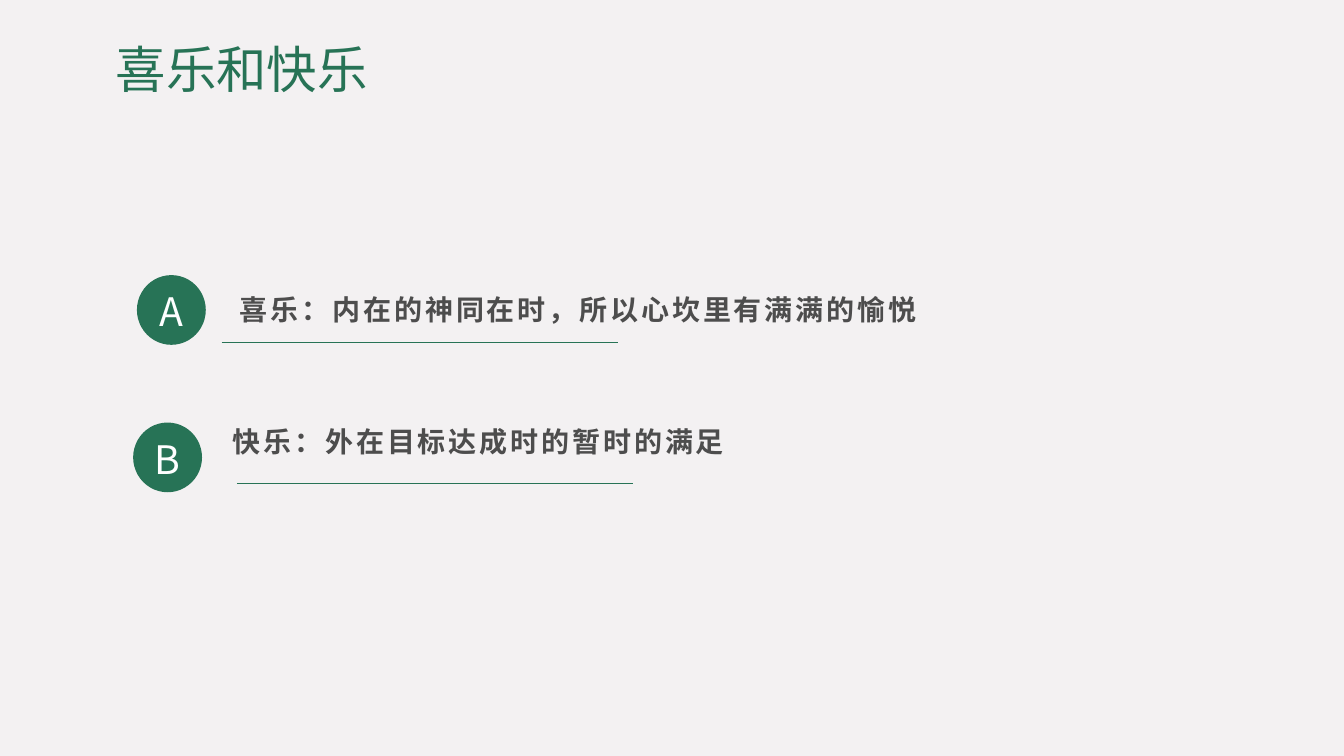
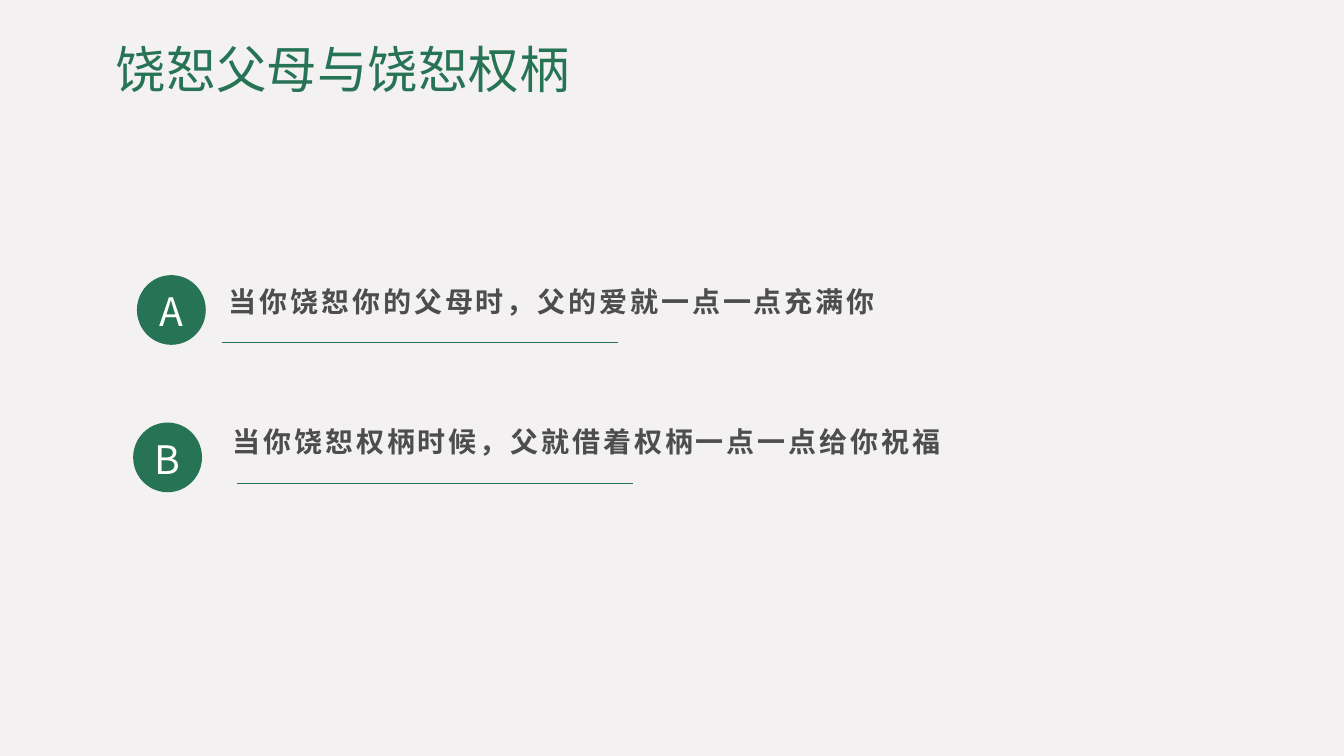
from pptx import Presentation
from pptx.dml.color import RGBColor
from pptx.enum.shapes import MSO_CONNECTOR, MSO_SHAPE
from pptx.enum.text import MSO_ANCHOR, PP_ALIGN
from pptx.oxml.ns import qn
from pptx.util import Inches, Pt

OVAL = MSO_SHAPE.OVAL
STRAIGHT = MSO_CONNECTOR.STRAIGHT
TOP, MIDDLE, BOTTOM = MSO_ANCHOR.TOP, MSO_ANCHOR.MIDDLE, MSO_ANCHOR.BOTTOM
LEFT, CENTER = PP_ALIGN.LEFT, PP_ALIGN.CENTER

FONT = "Noto Sans CJK SC"
BACKGROUND, GREEN, GRAY, WHITE = "F3F1F2", "277356", "4D4D4D", "FEFFFF"

SLIDE_WIDTH, SLIDE_HEIGHT = Inches(13.33), Inches(7.5)
COLUMNS, ROWS = 160, 90

TITLE_BOX = (12.6, 4.8, 129.1, 11.2)
BADGE_SIZE = (8.2, 8.3)
STATEMENT_SIZE = (110, 17.9)
RULE_LENGTH = 47.2
BADGES = {"A": (16.3, 32.75), "B": (15.85, 50.3)}
RULES = {"A": (26.4, 40.8), "B": (28.2, 57.6)}

SLIDES = [
    ("喜乐和快乐", [
        ("A", "喜乐：内在的神同在时，所以心坎里有满满的愉悦", (27.6, 27.85)),
        ("B", "快乐：外在目标达成时的暂时的满足", (26.75, 43.55)),
    ]),
    ("饶恕父母与饶恕权柄", [
        ("A", "当你饶恕你的父母时，父的爱就一点一点充满你", (26.3, 26.9)),
        ("B", "当你饶恕权柄时候，父就借着权柄一点一点给你祝福", (26.75, 43.55)),
    ]),
]


def color(value):
    """Turn a hex string into a colour."""
    return RGBColor.from_string(value)


def grid(left, top, width, height):
    """Turn columns and rows of the grid into slide lengths."""
    column, row = SLIDE_WIDTH / COLUMNS, SLIDE_HEIGHT / ROWS
    return [round(length) for length in
            (left * column, top * row, width * column, height * row)]


def write(shape, text, size, ink, bold=False, align=LEFT, anchor=TOP,
          line_spacing=None, letter_spacing=None, margins=None):
    """Write one formatted paragraph into a shape."""
    frame = shape.text_frame
    frame.word_wrap = True
    frame.vertical_anchor = anchor
    if margins:
        (frame.margin_left, frame.margin_top, frame.margin_right,
         frame.margin_bottom) = [Inches(margin) for margin in margins]
    paragraph = frame.paragraphs[0]
    paragraph.alignment = align
    if line_spacing:
        paragraph.line_spacing = line_spacing
    run = paragraph.add_run()
    run.text = text
    run.font.size = Pt(size)
    run.font.bold = bold
    run.font.name = FONT
    run.font.color.rgb = color(ink)
    properties = run.font._element
    properties.find(qn("a:latin")).addnext(
        properties.makeelement(qn("a:ea"), {"typeface": FONT}))
    if letter_spacing:
        properties.set("spc", str(letter_spacing * 100))


def add_title(slide, text):
    """Add the slide's title."""
    box = slide.shapes.add_textbox(*grid(*TITLE_BOX))
    write(box, text, 36, GREEN, line_spacing=0.9)


def add_rule(slide, left, top):
    """Add a thin line below a statement."""
    x, y, length, _ = grid(left, top, RULE_LENGTH, 0)
    rule = slide.shapes.add_connector(STRAIGHT, x, y, x + length, y)
    rule.line.color.rgb = color(GREEN)
    rule.line.width = Pt(0.5)
    properties = rule._element.spPr
    properties.append(properties.makeelement(qn("a:effectLst"), {}))


def add_badge(slide, letter, position):
    """Add a green circle with a letter."""
    badge = slide.shapes.add_shape(OVAL, *grid(*position, *BADGE_SIZE))
    badge.shadow.inherit = False
    badge.fill.solid()
    badge.fill.fore_color.rgb = color(GREEN)
    badge.line.fill.background()
    write(badge, letter, 28, WHITE, align=CENTER, anchor=BOTTOM,
          line_spacing=1.3, margins=(0, 0, 0, 0))


def add_statement(slide, text, position):
    """Add a bold, widely spaced statement."""
    box = slide.shapes.add_textbox(*grid(*position, *STATEMENT_SIZE))
    write(box, text, 20, GRAY, bold=True, anchor=MIDDLE,
          letter_spacing=2, margins=(0.08, 0, 0, 0))


def main():
    """Build and save the presentation."""
    presentation = Presentation()
    presentation.slide_width = SLIDE_WIDTH
    presentation.slide_height = SLIDE_HEIGHT
    fill = presentation.slide_master.background.fill
    fill.solid()
    fill.fore_color.rgb = color(BACKGROUND)
    blank = presentation.slide_layouts[6]
    for title, statements in SLIDES:
        slide = presentation.slides.add_slide(blank)
        add_title(slide, title)
        for letter, text, position in statements:
            add_rule(slide, *RULES[letter])
            add_badge(slide, letter, BADGES[letter])
            add_statement(slide, text, position)
    presentation.save("out.pptx")


if __name__ == "__main__":
    main()
